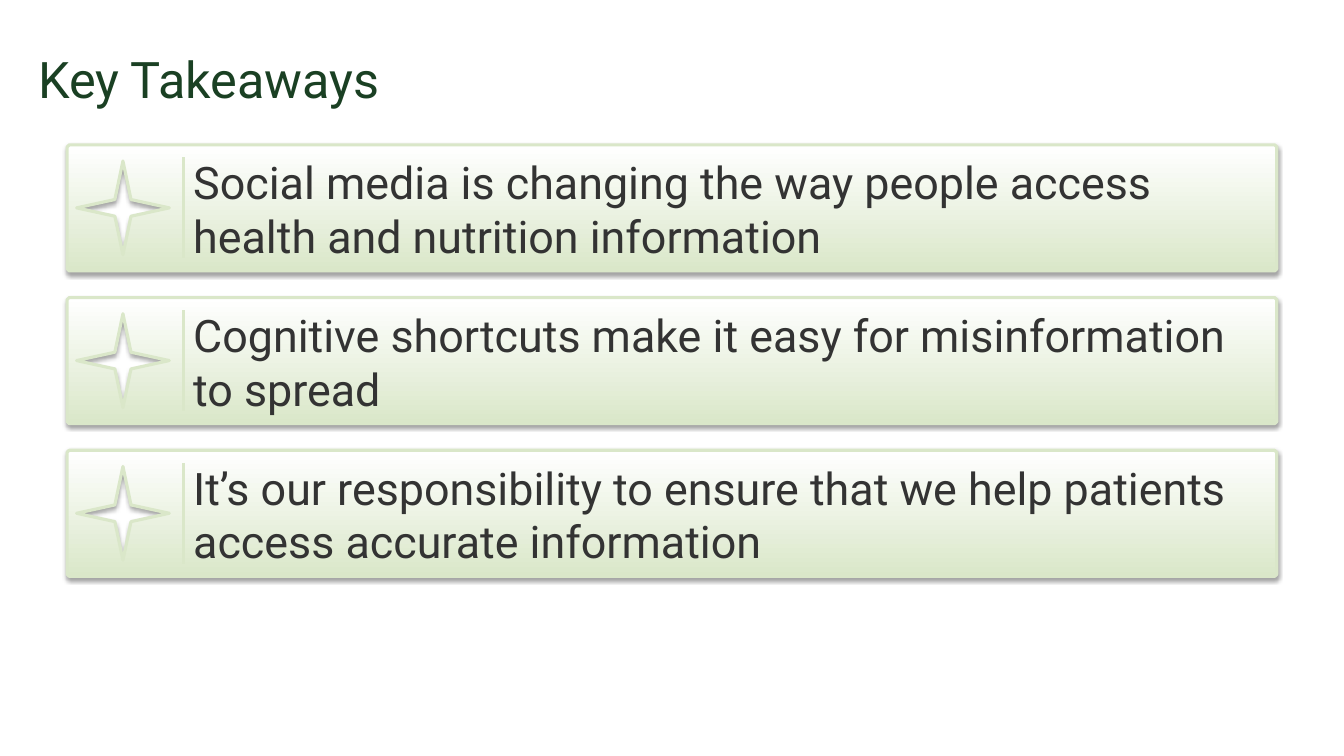
import lxml.etree
import pptx
import pptx.dml.color
import pptx.enum.shapes
import pptx.enum.text
import pptx.oxml.ns
import pptx.util

COLUMNS, ROWS = 20, 30
MARGIN, CARD_WIDTH = 1, 18
FIRST_CARD_ROW, CARD_HEIGHT, CARD_PITCH = 5.75, 5, 6.06
TAKEAWAYS = [
    "Social media is changing the way people access health and nutrition information",
    "Cognitive shortcuts make it easy for misinformation to spread",
    "It’s our responsibility to ensure that we help patients access accurate information",
]


def color(hex_code):
    return pptx.dml.color.RGBColor.from_string(hex_code)


def add_effect_list(shape):
    return lxml.etree.SubElement(
        shape._element.spPr, pptx.oxml.ns.qn("a:effectLst"))


class TakeawaySlide:
    """Places elements by grid column and row."""
    font = "Roboto"
    title_color, body_color = "1A4023", "333333"
    card_top, card_bottom, outline = "FFFFFF", "DAE7C9", "DAE7C9"
    outline_width = 2.25

    def __init__(self, deck):
        self.slide = deck.slides.add_slide(deck.slide_layouts[6])
        self.column = deck.slide_width / COLUMNS
        self.row = deck.slide_height / ROWS

    def point(self, column, row):
        return round(column * self.column), round(row * self.row)

    def set_text(self, frame, text, size, hex_code):
        frame.word_wrap = True
        paragraph = frame.paragraphs[0]
        paragraph.text = text
        paragraph.alignment = pptx.enum.text.PP_ALIGN.LEFT
        paragraph.font.name = self.font
        paragraph.font.size = pptx.util.Pt(size)
        paragraph.font.color.rgb = color(hex_code)
        return paragraph

    def draw_outline(self, line):
        line.color.rgb = color(self.outline)
        line.width = pptx.util.Pt(self.outline_width)

    def title(self, text):
        box = self.slide.shapes.add_textbox(
            *self.point(0.42, 0.75), *self.point(19.17, 5))
        box.text_frame.vertical_anchor = pptx.enum.text.MSO_ANCHOR.MIDDLE
        heading = self.set_text(box.text_frame, text, 36, self.title_color)
        heading.line_spacing = 0.9

    def card_points(self, top):
        """Corners of a card, each cut slightly to look rounded."""
        left, right, bottom = MARGIN, MARGIN + CARD_WIDTH, top + CARD_HEIGHT
        cut_x, cut_y = 0.03, 0.08
        return [self.point(*corner) for corner in (
            (left + cut_x, top), (right - cut_x, top),
            (right, top + cut_y), (right, bottom - cut_y),
            (right - cut_x, bottom), (left + cut_x, bottom),
            (left, bottom - cut_y), (left, top + cut_y))]

    def star_points(self, top):
        """Four long tips with a short inner corner between each pair."""
        center_x, center_y = MARGIN + 0.83, top + CARD_HEIGHT / 2
        tip_x, tip_y, inner_x, inner_y = 0.69, 1.86, 0.12, 0.33
        offsets = [(0, -tip_y), (-inner_x, -inner_y), (-tip_x, 0),
                   (-inner_x, inner_y), (0, tip_y), (inner_x, inner_y),
                   (tip_x, 0), (inner_x, -inner_y)]
        return [self.point(center_x + x, center_y + y) for x, y in offsets]

    def add_shadow(self, shape):
        shadow = lxml.etree.SubElement(
            add_effect_list(shape), pptx.oxml.ns.qn("a:outerShdw"),
            blurRad=str(int(pptx.util.Pt(3.1))),
            dist=str(int(pptx.util.Pt(1.8))),
            dir="5400000", rotWithShape="0")
        black = lxml.etree.SubElement(
            shadow, pptx.oxml.ns.qn("a:srgbClr"), val="000000")
        lxml.etree.SubElement(black, pptx.oxml.ns.qn("a:alpha"), val="35000")

    def card(self, top, text):
        """Draws a card with a star cut out of it, its text and a divider."""
        shapes = self.slide.shapes.add_group_shape().shapes
        star, frame = self.star_points(top), self.card_points(top)
        builder = shapes.build_freeform(*star[0])
        builder.add_line_segments(star[1:])
        builder.move_to(*frame[0])
        builder.add_line_segments(frame[1:])
        card = builder.convert_to_shape()
        card.fill.gradient()
        card.fill.gradient_angle = 270
        for stop, shade in zip(card.fill.gradient_stops,
                               (self.card_top, self.card_bottom)):
            stop.color.rgb = color(shade)
        self.draw_outline(card.line)
        self.add_shadow(card)

        body = card.text_frame
        body.vertical_anchor = pptx.enum.text.MSO_ANCHOR.TOP
        body.margin_left = pptx.util.Inches(1.25)
        body.margin_top = body.margin_right = pptx.util.Inches(0.1)
        body.margin_bottom = pptx.util.Inches(0.05)
        self.set_text(body, text, 32, self.body_color)

        divider_column = MARGIN + 1.73
        divider = shapes.add_connector(
            pptx.enum.shapes.MSO_CONNECTOR.STRAIGHT,
            *self.point(divider_column, top + 0.5),
            *self.point(divider_column, top + CARD_HEIGHT - 0.5))
        self.draw_outline(divider.line)
        add_effect_list(divider)


def main():
    deck = pptx.Presentation()
    deck.slide_width = pptx.util.Inches(13.33)
    deck.slide_height = pptx.util.Inches(7.5)
    slide = TakeawaySlide(deck)
    slide.title("Key Takeaways")
    for index, takeaway in enumerate(TAKEAWAYS):
        slide.card(FIRST_CARD_ROW + index * CARD_PITCH, takeaway)
    deck.save("out.pptx")


if __name__ == "__main__":
    main()
